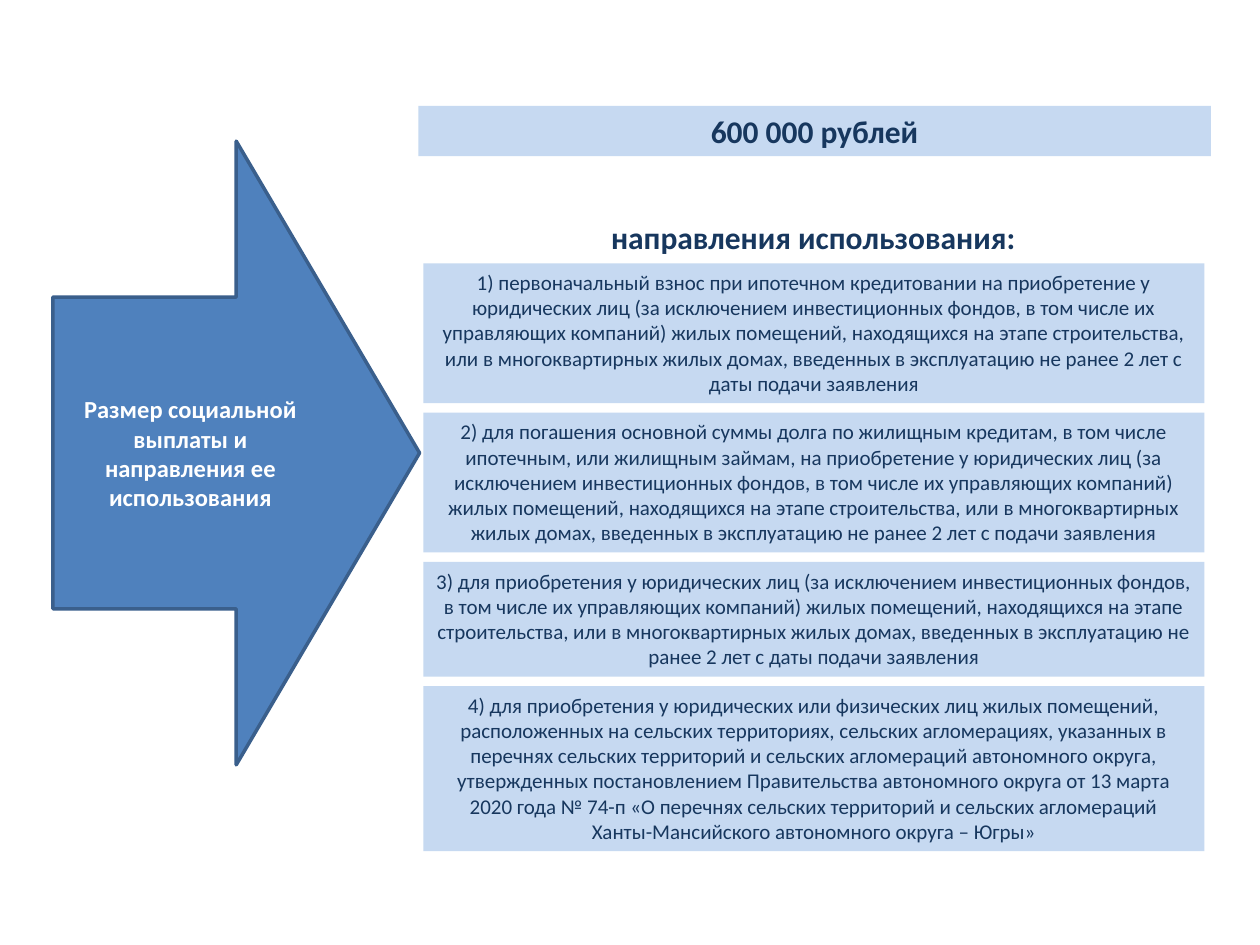
from pptx import Presentation
from pptx.dml.color import RGBColor
from pptx.enum.shapes import MSO_SHAPE
from pptx.enum.text import MSO_ANCHOR, MSO_AUTO_SIZE, PP_ALIGN
from pptx.util import Inches, Pt

RECTANGLE, RIGHT_ARROW = MSO_SHAPE.RECTANGLE, MSO_SHAPE.RIGHT_ARROW
TOP, MIDDLE = MSO_ANCHOR.TOP, MSO_ANCHOR.MIDDLE
CENTER = PP_ALIGN.CENTER
FIT_SHAPE, FIXED = MSO_AUTO_SIZE.SHAPE_TO_FIT_TEXT, MSO_AUTO_SIZE.NONE

NAVY = RGBColor(0x17, 0x37, 0x5E)
PALE_BLUE = RGBColor(0xC6, 0xD9, 0xF1)
BLUE = RGBColor(0x4F, 0x81, 0xBD)
DARK_BLUE = RGBColor(0x3A, 0x5F, 0x8C)
WHITE = RGBColor(0xFF, 0xFF, 0xFF)

BLANK_LAYOUT = 6
COLUMNS, ROWS = 100, 75

# Rows of the grid
USES_TOP = 20.9
USE_GAP = 0.75
LINE_HEIGHT = 2
BLOCK_PADDING = 1.1

AMOUNT = "600 000 рублей"
USES_HEADING = "направления использования:"
TOPIC = "Размер социальной выплаты и направления ее использования"
# Each use: its text and the number of lines it takes
USES = [
    ("1) первоначальный взнос при ипотечном кредитовании на приобретение у "
     "юридических лиц (за исключением инвестиционных фондов, в том числе их "
     "управляющих компаний) жилых помещений, находящихся на этапе строительства, "
     "или в многоквартирных жилых домах, введенных в эксплуатацию не ранее 2 лет с "
     "даты подачи заявления", 5),
    ("2) для погашения основной суммы долга по жилищным кредитам, в том числе "
     "ипотечным, или жилищным займам, на приобретение у юридических лиц (за "
     "исключением инвестиционных фондов, в том числе их управляющих компаний) "
     "жилых помещений, находящихся на этапе строительства, или в многоквартирных "
     "жилых домах, введенных в эксплуатацию не ранее 2 лет с подачи заявления", 5),
    ("3) для приобретения у юридических лиц (за исключением инвестиционных фондов, "
     "в том числе их управляющих компаний) жилых помещений, находящихся на этапе "
     "строительства, или в многоквартирных жилых домах, введенных в эксплуатацию не "
     "ранее 2 лет с даты подачи заявления", 4),
    ("4) для приобретения у юридических или физических лиц жилых помещений, "
     "расположенных на сельских территориях, сельских агломерациях, указанных в "
     "перечнях сельских территорий и сельских агломераций автономного округа, "
     "утвержденных постановлением Правительства автономного округа от 13 марта "
     "2020 года № 74-п «О перечнях сельских территорий и сельских агломераций\n"
     "Ханты-Мансийского автономного округа – Югры»", 6),
]


class SlideBuilder:
    """Holds the text style and the current slide, measured on a grid."""

    font_name = "Calibri"

    def __init__(self, presentation):
        self.column = presentation.slide_width / COLUMNS
        self.row = presentation.slide_height / ROWS
        self.slide = presentation.slides.add_slide(
            presentation.slide_layouts[BLANK_LAYOUT])

    def place(self, left, top, width, height):
        return (round(left * self.column), round(top * self.row),
                round(width * self.column), round(height * self.row))

    def set_text(self, shape, text, size, color=NAVY, bold=False, anchor=TOP, fit=FIT_SHAPE):
        frame = shape.text_frame
        frame.word_wrap = True
        frame.auto_size = fit
        frame.vertical_anchor = anchor
        paragraph = frame.paragraphs[0]
        paragraph.alignment = CENTER
        for number, line in enumerate(text.split("\n")):
            if number:
                paragraph.add_line_break()
            run = paragraph.add_run()
            run.text = line
            run.font.name = self.font_name
            run.font.size = Pt(size)
            run.font.bold = bold
            run.font.color.rgb = color

    def filled_shape(self, kind, area, fill):
        shape = self.slide.shapes.add_shape(kind, *self.place(*area))
        shape.shadow.inherit = False
        shape.fill.solid()
        shape.fill.fore_color.rgb = fill
        return shape

    def block(self, area, text, size=12, bold=False):
        block = self.filled_shape(RECTANGLE, area, PALE_BLUE)
        block.line.fill.background()
        self.set_text(block, text, size, bold=bold)

    def heading(self, area, text):
        heading = self.slide.shapes.add_textbox(*self.place(*area))
        self.set_text(heading, text, 18, bold=True)

    def arrow(self, area, text):
        arrow = self.filled_shape(RIGHT_ARROW, area, BLUE)
        arrow.line.color.rgb = DARK_BLUE
        arrow.line.width = Pt(2)
        self.set_text(arrow, text, 14, WHITE, True, MIDDLE, FIXED)


def main():
    presentation = Presentation()
    presentation.slide_width = Inches(10)
    presentation.slide_height = Inches(7.5)
    builder = SlideBuilder(presentation)

    builder.arrow((4.2, 11.2, 29.1, 49.5), TOPIC)
    builder.block((33.2, 8.4, 62.9, 4), AMOUNT, size=18, bold=True)
    builder.heading((33.2, 16.8, 62.7, 4), USES_HEADING)

    top = USES_TOP
    for use, lines in USES:
        height = lines * LINE_HEIGHT + BLOCK_PADDING
        builder.block((33.6, top, 62, height), use)
        top += height + USE_GAP

    presentation.save("out.pptx")


if __name__ == "__main__":
    main()
